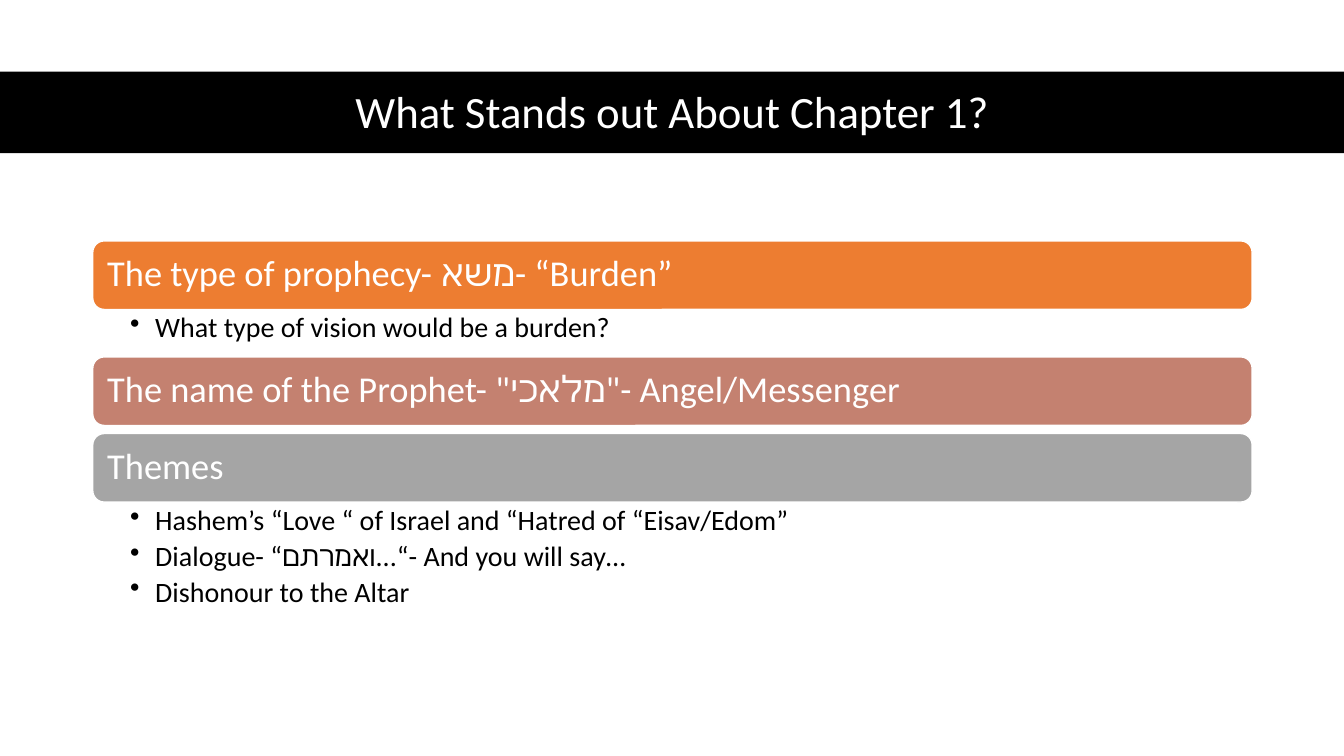
from lxml import etree
from pptx import Presentation
from pptx import util as u
from pptx.dml.color import RGBColor
from pptx.enum import shapes, text
from pptx.oxml import ns

WIDTH, HEIGHT = u.Inches(13.33), u.Inches(7.5)
LEFT, SPAN = 6.9, 86.27
TOP, BAR, GAP = 31.87, 9.07, 1.07
TOPICS = [
    ("The type of prophecy- משא- “Burden”", "ED7D31", 6.27,
     ["What type of vision would be a burden?"]),
    ("The name of the Prophet- \"מלאכי\"- Angel/Messenger", "C48170", GAP, []),
    ("Themes", "A5A5A5", 15.33,
     ["Hashem’s “Love “ of Israel and “Hatred of “Eisav/Edom”",
      "Dialogue- “ואמרתם...“- And you will say…",
      "Dishonour to the Altar"]),
]


def color(value):
    """Turn a hex string into a colour."""
    return RGBColor.from_string(value)


def box(x, y, w, h):
    """Turn percentages of the slide into lengths."""
    return [int(share * side / 100)
            for share, side in zip((x, y, w, h), (WIDTH, HEIGHT) * 2)]


def add_box(s, kind, area, fill, line=None):
    """Add a filled preset shape."""
    sp = s.shapes.add_shape(kind, *box(*area))
    sp.shadow.inherit = False
    sp.fill.solid()
    sp.fill.fore_color.rgb = color(fill)
    if line:
        sp.line.color.rgb = color(line)
        sp.line.width = u.Pt(1)
    else:
        sp.line.fill.background()
    return sp


def set_frame(sp, anchor, insets):
    """Set wrapping, anchor and insets in inches, and return the frame."""
    tf = sp.text_frame
    tf.word_wrap = True
    tf.vertical_anchor = anchor
    (tf.margin_left, tf.margin_top,
     tf.margin_right, tf.margin_bottom) = map(u.Inches, insets)
    return tf


def write(p, words, size, ink, align=text.PP_ALIGN.LEFT, after=0):
    """Write one run into a paragraph."""
    p.alignment = align
    p.line_spacing = 0.9
    p.space_after = u.Pt(after)
    r = p.add_run()
    r.text = words
    r.font.name = "Calibri"
    r.font.size = u.Pt(size)
    r.font.color.rgb = color(ink)


def add_title(s, words):
    """Add the title over a full-width band."""
    add_box(s, shapes.MSO_SHAPE.RECTANGLE, (0, 9.47, 100, 10.8), "000000")
    sp = s.shapes.add_textbox(*box(LEFT, 9.87, SPAN, 10.4))
    tf = set_frame(sp, text.MSO_ANCHOR.MIDDLE, (0.1, 0.05, 0.1, 0.05))
    write(tf.paragraphs[0], words, 32, "FFFFFF", text.PP_ALIGN.CENTER)


def add_bar(s, y, words, fill):
    """Add a rounded topic bar."""
    sp = add_box(s, shapes.MSO_SHAPE.ROUNDED_RECTANGLE,
                 (LEFT, y, SPAN, BAR), fill, "FFFFFF")
    tf = set_frame(sp, text.MSO_ANCHOR.MIDDLE, (0.11,) * 4)
    write(tf.paragraphs[0], words, 26, "FFFFFF")


def add_bullets(s, y, h, points):
    """Add the bulleted points below a bar."""
    sp = s.shapes.add_textbox(*box(LEFT, y, SPAN, h))
    tf = set_frame(sp, text.MSO_ANCHOR.TOP, (0.37, 0.04, 0.2, 0.04))
    for i, words in enumerate(points):
        p = tf.add_paragraph() if i else tf.paragraphs[0]
        p.level = 1
        write(p, words, 20, "000000", after=4)
        pPr = p._p.get_or_add_pPr()
        pPr.set("marL", str(u.Inches(0.25)))
        pPr.set("indent", str(-u.Inches(0.25)))
        etree.SubElement(pPr, ns.qn("a:buChar"), char="•")


def main():
    """Build and save the slide."""
    prs = Presentation()
    prs.slide_width, prs.slide_height = WIDTH, HEIGHT
    s = prs.slides.add_slide(prs.slide_layouts[6])
    add_title(s, "What Stands out About Chapter 1?")
    y = TOP
    for words, fill, below, points in TOPICS:
        add_bar(s, y, words, fill)
        y += BAR
        if points:
            add_bullets(s, y, below, points)
        y += below
    prs.save("out.pptx")


if __name__ == "__main__":
    main()
